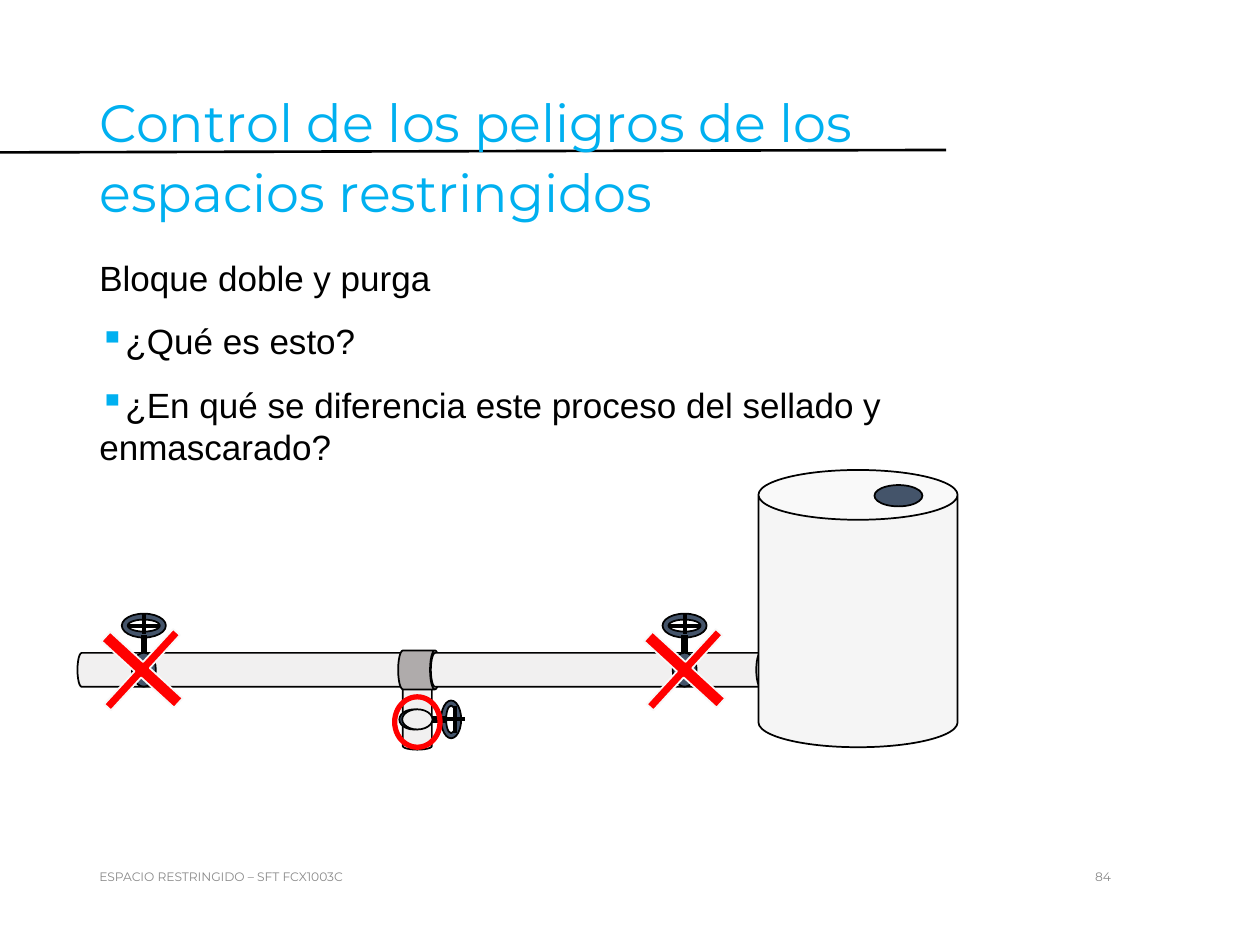
from dataclasses import dataclass

from lxml.etree import SubElement
from pptx import Presentation
from pptx.dml.color import RGBColor
from pptx.enum.shapes import MSO_CONNECTOR, MSO_SHAPE as Shape
from pptx.enum.text import MSO_ANCHOR as Anchor, MSO_AUTO_SIZE as AutoSize, PP_ALIGN as Align
from pptx.oxml.ns import qn
from pptx.util import Pt


@dataclass(frozen=True)
class Theme:
    accent: str = "00B0F0"
    ink: str = "000000"
    muted: str = "898989"
    pipe: str = "F1F0F0"
    collar: str = "AFABAB"
    tank: str = "F5F5F5"
    steel: str = "44546A"
    alert: str = "FF0000"
    halo: str = "F8F8F8"
    heading_font: str = "Montserrat"
    body_font: str = "Arial"
    title_size: float = 30
    body_size: float = 20
    footer_size: float = 7


class SlideBuilder:
    def __init__(self, slide, theme):
        self.slide = slide
        self.theme = theme
        self.shapes = slide.shapes

    def group(self):
        """Return a builder that draws into a new group."""
        inner = SlideBuilder(self.slide, self.theme)
        inner.shapes = self.shapes.add_group_shape().shapes
        return inner

    def run(self, paragraph, text, font, size, color):
        run = paragraph.add_run()
        run.text = text
        run.font.name = font
        run.font.size = Pt(size)
        run.font.color.rgb = RGBColor.from_string(color)

    def title(self, text, left, top, width, height):
        theme = self.theme
        title = self.slide.shapes.title
        title.left, title.top, title.width, title.height = map(Pt, (left, top, width, height))
        frame = title.text_frame
        frame.word_wrap = True
        frame.auto_size = AutoSize.NONE
        frame.vertical_anchor = Anchor.TOP
        paragraph = frame.paragraphs[0]
        paragraph.alignment = Align.LEFT
        paragraph.line_spacing = Pt(40)
        self.run(paragraph, text, theme.heading_font, theme.title_size, theme.accent)
        return title

    def text_frame(self, left, top, width, height, anchor):
        frame = self.shapes.add_textbox(*map(Pt, (left, top, width, height))).text_frame
        frame.word_wrap = True
        frame.vertical_anchor = anchor
        return frame

    def footer(self, text, left, width, align):
        theme = self.theme
        paragraph = self.text_frame(left, 486.7, width, 28.8, Anchor.MIDDLE).paragraphs[0]
        paragraph.alignment = align
        self.run(paragraph, text, theme.heading_font, theme.footer_size, theme.muted)

    def body(self, lead, questions, left, top, width, height):
        theme = self.theme
        frame = self.text_frame(left, top, width, height, Anchor.TOP)
        for index, text in enumerate([lead, *questions]):
            paragraph = frame.add_paragraph() if index else frame.paragraphs[0]
            if index:
                self.bullet(paragraph)
                paragraph.space_before = Pt(6)
            paragraph.space_after = Pt(6)
            paragraph.line_spacing = Pt(24)
            self.run(paragraph, text, theme.body_font, theme.body_size, theme.ink)

    def bullet(self, paragraph):
        properties = paragraph._p.get_or_add_pPr()
        color = SubElement(properties, qn("a:buClr"))
        SubElement(color, qn("a:srgbClr"), val=self.theme.accent)
        SubElement(properties, qn("a:buChar"), char="▪")

    def line(self, x1, y1, x2, y2, weight):
        line = self.shapes.add_connector(MSO_CONNECTOR.STRAIGHT, *map(Pt, (x1, y1, x2, y2)))
        line.line.color.rgb = RGBColor.from_string(self.theme.ink)
        line.line.width = Pt(weight)
        SubElement(line._element.spPr, qn("a:effectLst"))
        return line

    def figure(self, kind, cx, cy, width, height, fill=None, outline=None,
               weight=1, rotation=0, adjust=None):
        """Draw a preset shape around its centre; no fill colour leaves it hollow."""
        figure = self.shapes.add_shape(
            kind, *map(Pt, (cx - width / 2, cy - height / 2, width, height)))
        figure.shadow.inherit = False
        figure.rotation = rotation
        if adjust is not None:
            figure.adjustments[0] = adjust
        if fill:
            figure.fill.solid()
            figure.fill.fore_color.rgb = RGBColor.from_string(fill)
        else:
            figure.fill.background()
        figure.line.color.rgb = RGBColor.from_string(outline or self.theme.ink)
        figure.line.width = Pt(weight)

    def block_valve(self, cx):
        steel = self.theme.steel
        self.figure(Shape.DONUT, cx, 357.5, 25.2, 13.7, steel)
        self.line(cx - 9, 357.7, cx + 9, 357.7, 2.25)
        self.line(cx, 362.2, cx, 350.6, 2.25)
        self.line(cx, 373, cx, 362.9, 3.75)
        self.figure(Shape.DONUT, cx, 382.7, 19.4, 13.7, steel, rotation=90, adjust=0.5)

    def bleed_valve(self, cy):
        steel = self.theme.steel
        self.figure(Shape.DONUT, 257.8, cy, 21.6, 11.5, steel, rotation=90)
        self.line(259.9, cy - 7.9, 259.9, cy + 7.9, 2.25)
        self.line(255.6, cy, 265.7, cy, 2.25)
        self.line(247, cy, 254.9, cy, 3.75)
        self.figure(Shape.DONUT, 236.5, cy, 16.6, 11.5, steel, rotation=180, adjust=0.5)

    def closed_mark(self, cx):
        self.figure(Shape.CROSS, cx, 382.7, 58.3, 56.2, self.theme.alert,
                    self.theme.halo, rotation=312.5, adjust=0.454)


def main():
    theme = Theme()
    deck = Presentation()
    deck.slide_width, deck.slide_height = Pt(720), Pt(540)
    slide = deck.slides.add_slide(deck.slide_layouts[5])
    page = SlideBuilder(slide, theme)

    margin = 49.7
    rule = page.line(0, 87.1, 540.7, 85.7, 1.5)
    page.footer("ESPACIO RESTRINGIDO – SFT FCX1003C", margin, 432, Align.LEFT)
    page.footer("84", 540.7, 179.3, Align.CENTER)
    page.body("Bloque doble y purga",
              ["¿Qué es esto?",
               "¿En qué se diferencia este proceso del sellado y enmascarado?"],
              margin, 143.3, 537.8, 334.1)
    title = page.title("Control de los peligros de los espacios restringidos",
                       margin, 43.9, 491, 99.4)
    rule._element.addnext(title._element)  # the heading lies over the rule

    pipe_y, bleed_x, bleed_y = 382.8, 238.5, 411.1
    page.figure(Shape.CAN, bleed_x, 408.6, 16.6, 39.6, theme.pipe)
    page.figure(Shape.CAN, 140, pipe_y, 19.4, 191.5, theme.pipe, rotation=90)
    page.figure(Shape.CAN, 239.4, pipe_y, 22.3, 23.8, theme.collar, rotation=90)
    page.figure(Shape.CAN, 341.6, pipe_y, 19.4, 190.8, theme.pipe, rotation=90)

    inlet_x, outlet_x = 82.2, 391.2
    for valve_x in (inlet_x, outlet_x):
        page.block_valve(valve_x)
    page.group().bleed_valve(bleed_y)
    page.figure(Shape.OVAL, bleed_x, bleed_y, 17.3, 11.5, theme.pipe)

    for mark_x in (outlet_x, inlet_x - 1):
        page.closed_mark(mark_x)
    page.figure(Shape.OVAL, bleed_x, 412.6, 25.9, 28.8, outline=theme.alert, weight=3)

    page.figure(Shape.CAN, 490.3, 347.8, 113.8, 158.4, theme.tank)
    page.figure(Shape.OVAL, 513.4, 283.3, 27.4, 12.2, theme.steel)

    deck.save("out.pptx")


if __name__ == "__main__":
    main()
